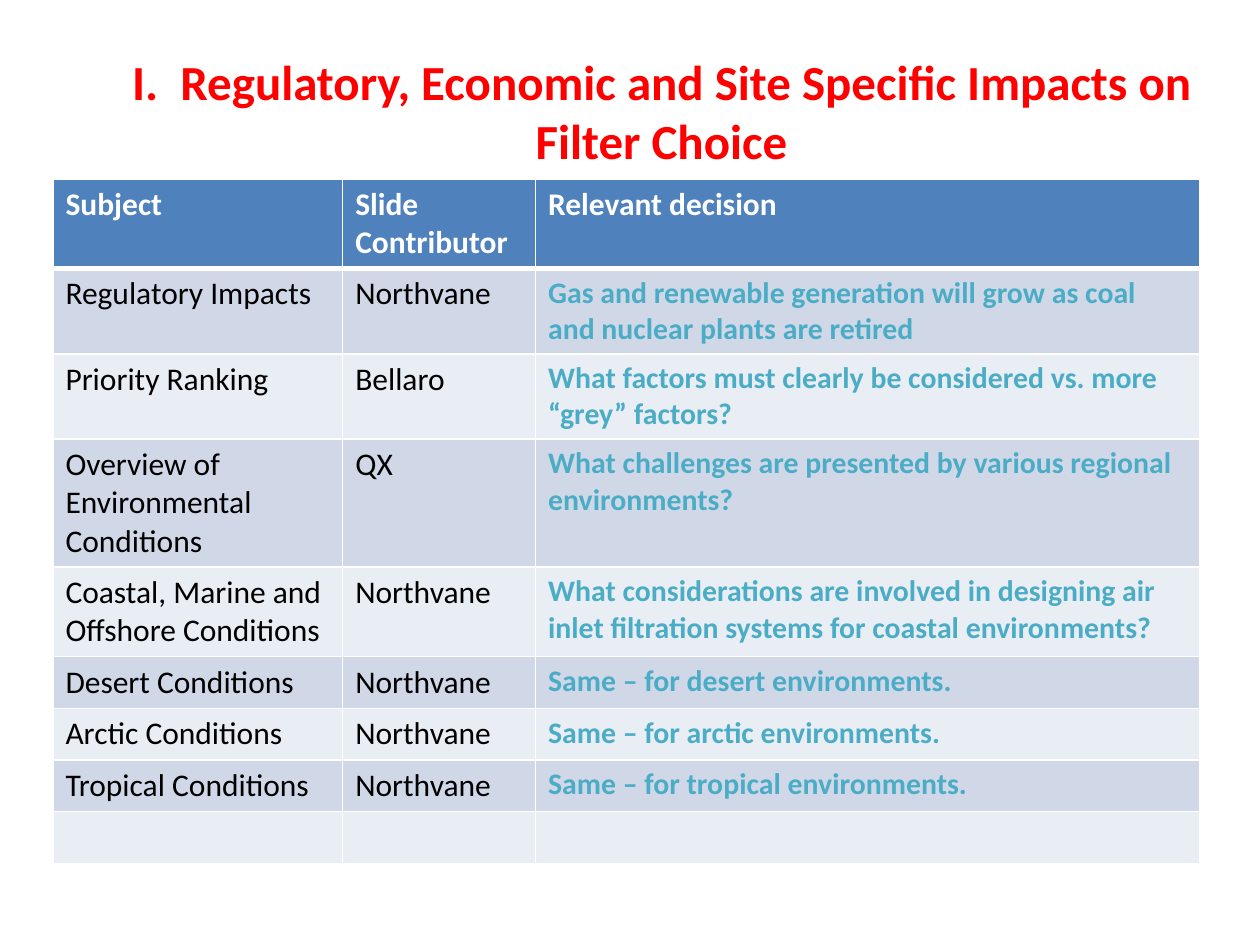
from lxml import etree
from pptx import Presentation
from pptx.dml.color import RGBColor
from pptx.enum import text
from pptx.oxml.ns import qn
from pptx.util import Inches, Pt

WHITE, BLACK, RED, BLUE, TEAL = "FFFFFF", "000000", "FF0000", "4F81BD", "4BACC6"
BANDS = ("D0D8E8", "E9EDF4")
COLUMNS = (2.3, 1.53, 5.27)
ROW_HEIGHT = 0.41
ROWS = [
    ("Subject", "Slide Contributor", "Relevant decision"),
    ("Regulatory Impacts", "Northvane",
     "Gas and renewable generation will grow as coal and nuclear plants are retired"),
    ("Priority Ranking", "Bellaro",
     "What factors must clearly be considered vs. more “grey” factors?"),
    ("Overview of Environmental Conditions", "QX",
     "What challenges are presented by various regional environments?"),
    ("Coastal, Marine and Offshore Conditions", "Northvane",
     "What considerations are involved in designing air inlet filtration systems "
     "for coastal environments?"),
    ("Desert Conditions", "Northvane", "Same – for desert environments."),
    ("Arctic Conditions", "Northvane", "Same – for arctic environments."),
    ("Tropical Conditions", "Northvane", "Same – for tropical environments."),
    ("", "", ""),
]


def rgb(value):
    """Turn a hex string into a colour."""
    return RGBColor.from_string(value)


def set_font(p, size, color, bold):
    """Format a whole paragraph."""
    p.font.name = "Calibri"
    p.font.size = Pt(size)
    p.font.bold = bold
    p.font.color.rgb = rgb(color)


def set_borders(cell, bottom):
    """Give a cell white borders, with its own width at the bottom."""
    tc_pr = cell._tc.get_or_add_tcPr()
    for side, width in (("L", 1), ("R", 1), ("T", 1), ("B", bottom)):
        ln = etree.SubElement(tc_pr, qn(f"a:ln{side}"), w=str(Pt(width)))
        fill = etree.SubElement(ln, qn("a:solidFill"))
        etree.SubElement(fill, qn("a:srgbClr"), val=WHITE)


def add_title(s, left, top, width, height):
    """Place the slide title in the given box."""
    sp = s.shapes.title
    sp.left, sp.top, sp.width, sp.height = map(Inches, (left, top, width, height))
    tf = sp.text_frame
    tf.text = "I.  Regulatory, Economic and Site Specific Impacts on Filter Choice"
    tf.vertical_anchor = text.MSO_ANCHOR.MIDDLE
    p = tf.paragraphs[0]
    p.alignment = text.PP_ALIGN.CENTER
    set_font(p, 28, RED, True)


def add_subjects(s, left, top):
    """Place the table of subjects, contributors and decisions."""
    table = s.shapes.add_table(
        len(ROWS), len(COLUMNS), Inches(left), Inches(top),
        Inches(sum(COLUMNS)), Inches(ROW_HEIGHT * len(ROWS))).table
    for column, width in zip(table.columns, COLUMNS):
        column.width = Inches(width)
    for i, row in enumerate(ROWS):
        table.rows[i].height = Inches(ROW_HEIGHT)
        for j, value in enumerate(row):
            cell = table.cell(i, j)
            header = i == 0
            set_borders(cell, 3 if header else 1)
            cell.fill.solid()
            cell.fill.fore_color.rgb = rgb(BLUE if header else BANDS[(i - 1) % 2])
            cell.text = value
            p = cell.text_frame.paragraphs[0]
            if header:
                set_font(p, 18, WHITE, True)
            elif j == 2 and value:
                set_font(p, 17, TEAL, True)
            else:
                set_font(p, 18, BLACK, False)


def main():
    """Build and save the slide."""
    prs = Presentation()
    prs.slide_width, prs.slide_height = Inches(10), Inches(7.5)
    s = prs.slides.add_slide(prs.slide_layouts[5])
    add_title(s, 0.75, 0.25, 9, 1.25)
    add_subjects(s, 0.42, 1.42)
    prs.save("out.pptx")


if __name__ == "__main__":
    main()
